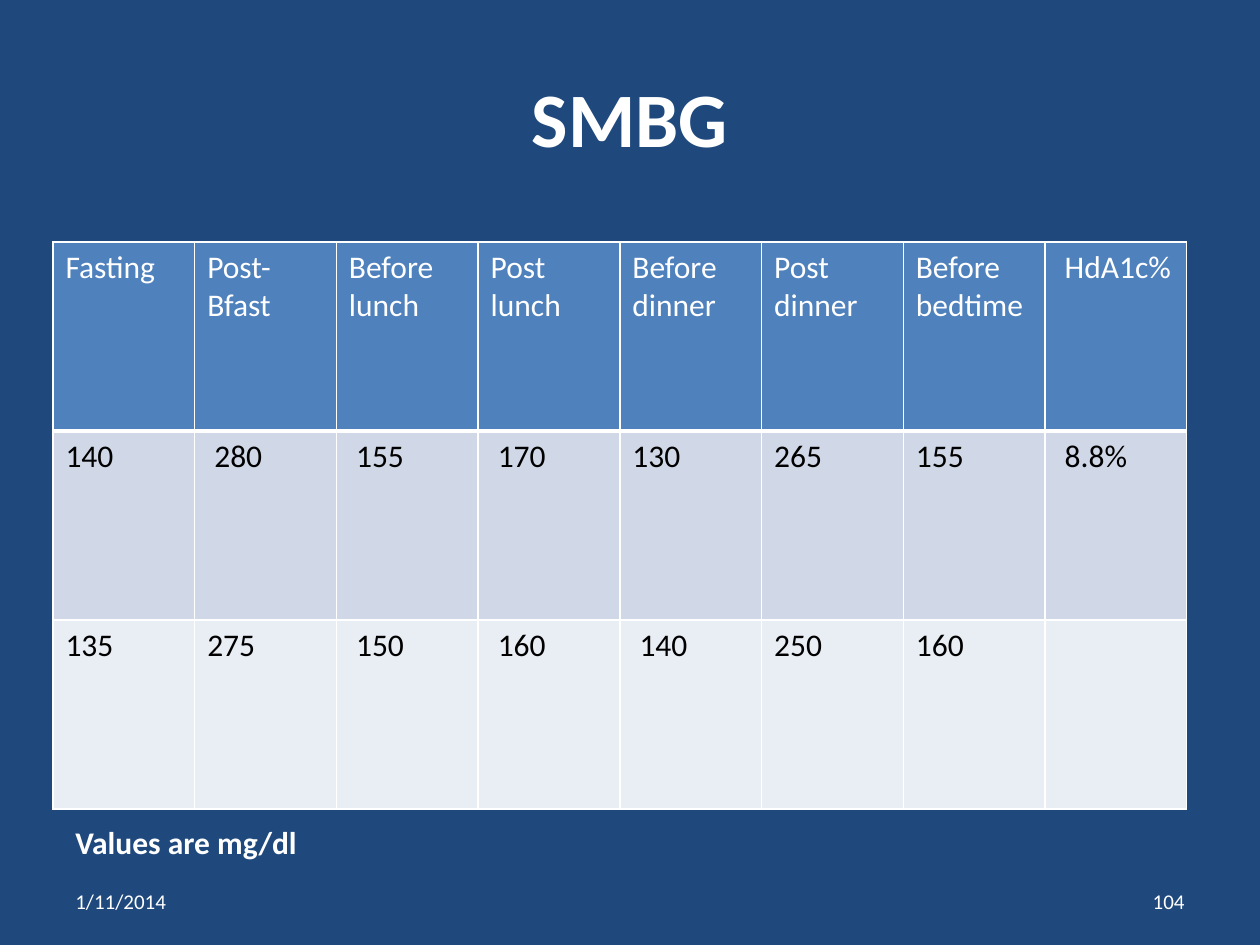
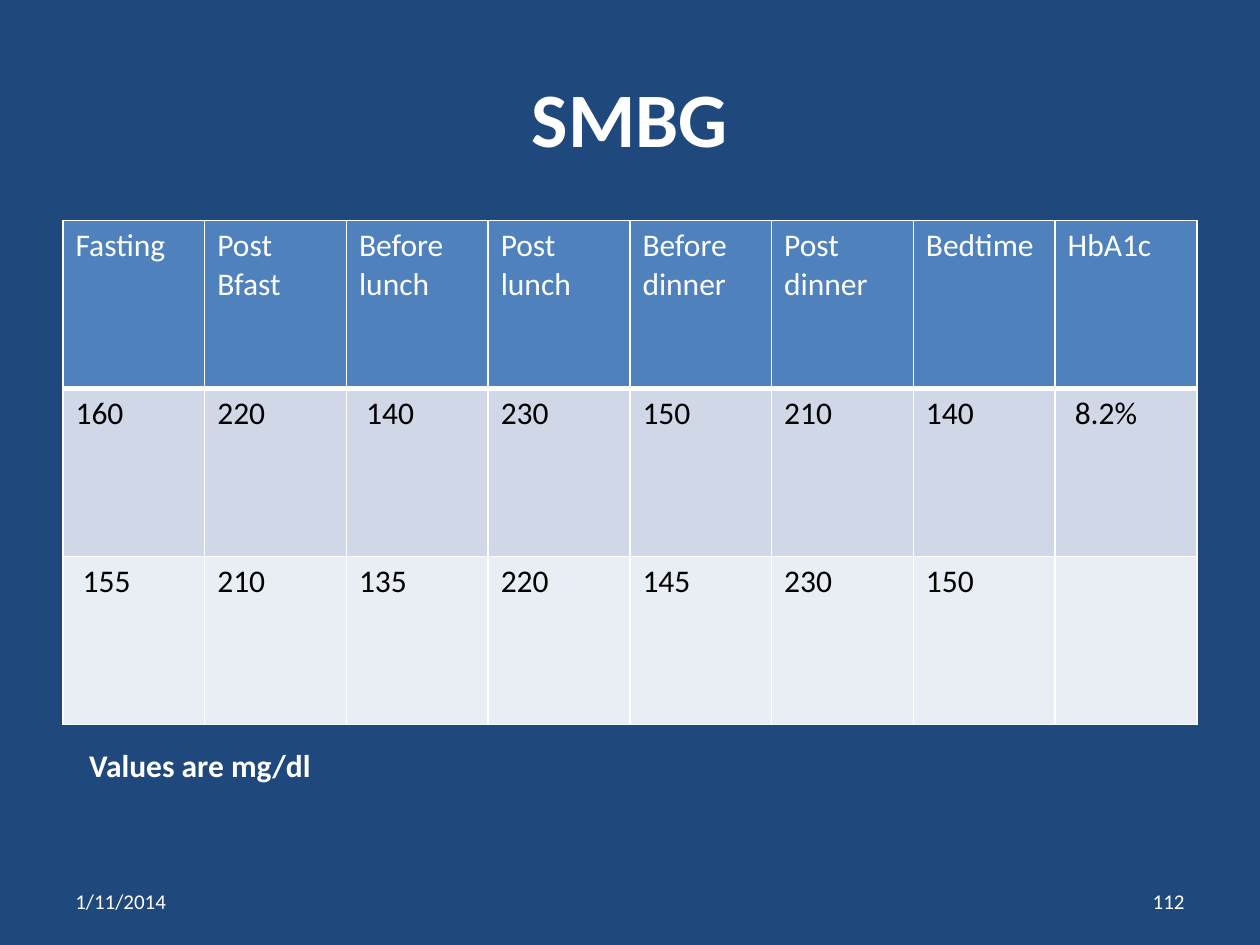
"""Build two self-monitored blood glucose (SMBG) table slides."""
from lxml import etree
from pptx import Presentation
from pptx.dml.color import RGBColor
from pptx.enum.text import MSO_ANCHOR, MSO_AUTO_SIZE, PP_ALIGN
from pptx.oxml.ns import qn
from pptx.util import Inches, Pt

LEFT, CENTER, RIGHT = PP_ALIGN.LEFT, PP_ALIGN.CENTER, PP_ALIGN.RIGHT
TOP, MIDDLE = MSO_ANCHOR.TOP, MSO_ANCHOR.MIDDLE
FIT_SHAPE = MSO_AUTO_SIZE.SHAPE_TO_FIT_TEXT
TITLE_ONLY = 5

TITLE = "SMBG"
UNIT_NOTE = "Values are mg/dl"
DATE = "1/11/2014"
SLIDES = [
    {
        "number": "104",
        "table_at": (0.42, 1.92, 9, 4.5),
        "note_at": (0.5, 6.48, 1.97, 0.4),
        "rows": [
            ["Fasting", "Post-Bfast", "Before lunch", "Post lunch",
             "Before dinner", "Post dinner", "Before bedtime", " HdA1c%"],
            ["140", " 280", " 155", " 170", "130", "265", "155", " 8.8%"],
            ["135", "275", " 150", " 160", " 140", "250", "160", ""],
        ],
    },
    {
        "number": "112",
        "table_at": (0.5, 1.75, 9, 4),
        "note_at": (0.61, 5.87, 1.97, 0.4),
        "rows": [
            ["Fasting", "Post Bfast", "Before lunch", "Post lunch",
             "Before dinner", "Post dinner", "Bedtime", "HbA1c"],
            ["160", "220", " 140", "230", "150", "210", "140", " 8.2%"],
            [" 155", "210", "135", "220", "145", "230", "150", ""],
        ],
    },
]

THEME = {
    "font": "Calibri",
    "background": "1F497D",
    "light": "FFFFFF",
    "dark": "000000",
    "header": "4F81BD",
    "bands": ("D0D8E8", "E9EDF4"),
    "title_size": 44,
    "body_size": 18,
    "footer_size": 12,
    "border": 1,
    "header_rule": 3,
}
TITLE_AT = (0.5, 0.3, 9, 1.25)
DATE_AT = (0.5, 6.95, 2.33, 0.4)
NUMBER_AT = (7.17, 6.95, 2.33, 0.4)


def color(name):
    return RGBColor.from_string(name)


def write(frame, text, size, ink=THEME["light"], bold=False, align=LEFT):
    para = frame.paragraphs[0]
    para.alignment = align
    if not text:
        return
    span = para.add_run()
    span.text = text
    style = {"name": THEME["font"], "size": Pt(size), "bold": bold}
    for key, value in style.items():
        setattr(span.font, key, value)
    span.font.color.rgb = color(ink)


def add_label(page, place, text, size, bold=False, align=LEFT,
              anchor=TOP, wrap=True):
    frame = page.shapes.add_textbox(*map(Inches, place)).text_frame
    frame.word_wrap = wrap
    frame.vertical_anchor = anchor
    if not wrap:
        frame.auto_size = FIT_SHAPE
    write(frame, text, size, bold=bold, align=align)


def add_title(page):
    box = page.shapes.title
    edges = ("left", "top", "width", "height")
    for edge, value in zip(edges, TITLE_AT):
        setattr(box, edge, Inches(value))
    box.text_frame.vertical_anchor = MIDDLE
    write(box.text_frame, TITLE, THEME["title_size"], bold=True, align=CENTER)


def add_borders(cell, bottom):
    properties = cell._tc.get_or_add_tcPr()
    widths = dict.fromkeys(("lnL", "lnR", "lnT"), THEME["border"])
    widths["lnB"] = bottom
    for side, width in widths.items():
        line = etree.SubElement(properties, qn(f"a:{side}"), w=str(Pt(width)))
        fill = etree.SubElement(line, qn("a:solidFill"))
        etree.SubElement(fill, qn("a:srgbClr"), val=THEME["light"])


def add_readings(page, place, rows):
    frame = page.shapes.add_table(len(rows), len(rows[0]), *map(Inches, place))
    table = frame.table
    table.first_row = table.horz_banding = False
    for row_index, row in enumerate(rows):
        is_header = row_index == 0
        fill = THEME["header"] if is_header else THEME["bands"][(row_index - 1) % 2]
        ink = THEME["light" if is_header else "dark"]
        bottom = THEME["header_rule" if is_header else "border"]
        for column_index, text in enumerate(row):
            cell = table.cell(row_index, column_index)
            add_borders(cell, bottom)
            cell.fill.solid()
            cell.fill.fore_color.rgb = color(fill)
            write(cell.text_frame, text, THEME["body_size"], ink)


def main():
    deck = Presentation()
    deck.slide_width, deck.slide_height = Inches(10), Inches(7.5)
    backdrop = deck.slide_master.background.fill
    backdrop.solid()
    backdrop.fore_color.rgb = color(THEME["background"])
    for content in SLIDES:
        page = deck.slides.add_slide(deck.slide_layouts[TITLE_ONLY])
        add_title(page)
        add_readings(page, content["table_at"], content["rows"])
        add_label(page, content["note_at"], UNIT_NOTE, THEME["body_size"],
                  bold=True, wrap=False)
        add_label(page, DATE_AT, DATE, THEME["footer_size"], anchor=MIDDLE)
        add_label(page, NUMBER_AT, content["number"], THEME["footer_size"],
                  align=RIGHT, anchor=MIDDLE)
    deck.save("out.pptx")


if __name__ == "__main__":
    main()
